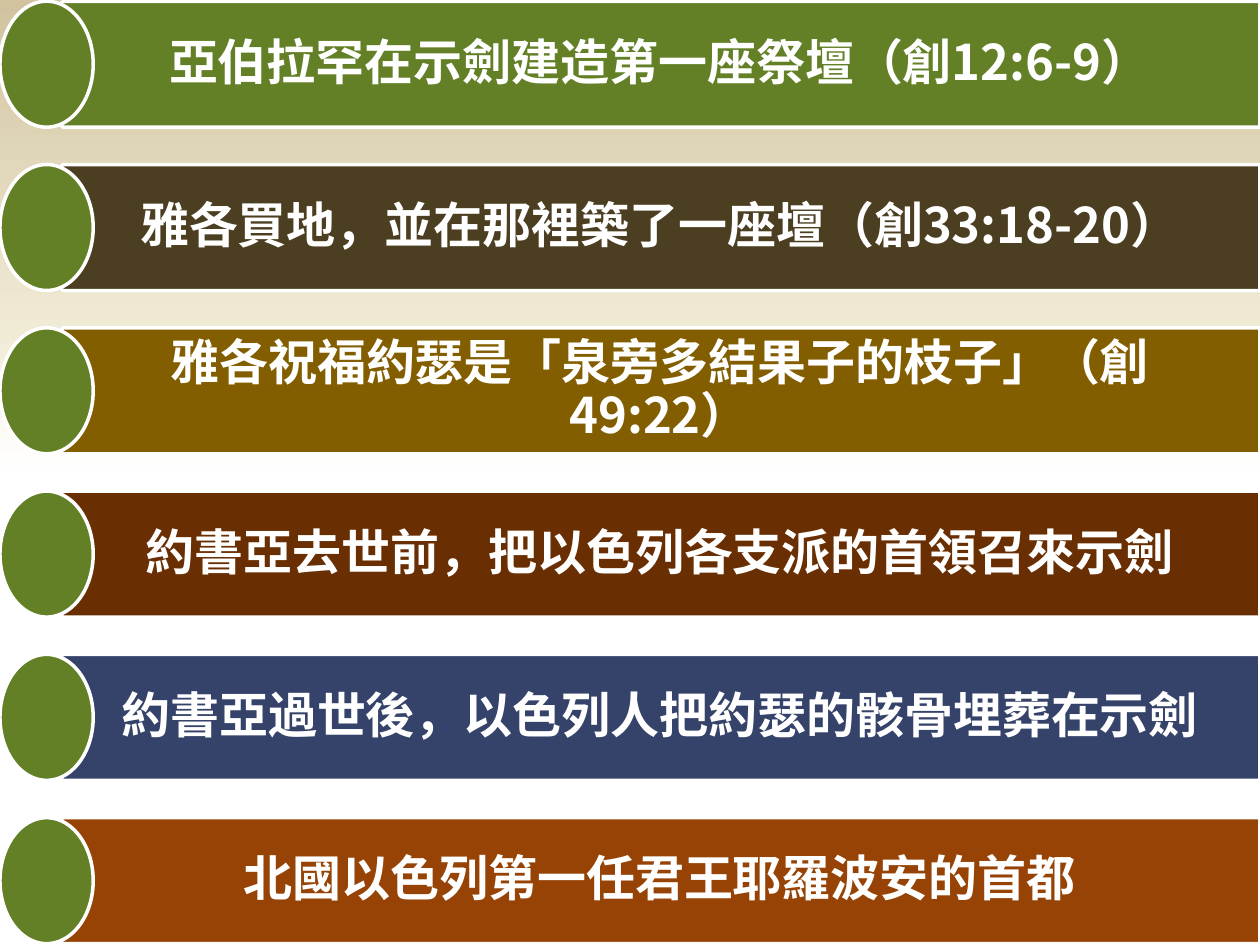
from copy import deepcopy
from dataclasses import dataclass

from lxml.etree import SubElement
from pptx import Presentation
from pptx.dml.color import RGBColor
from pptx.enum.shapes import MSO_SHAPE
from pptx.enum.text import MSO_ANCHOR, PP_ALIGN
from pptx.oxml.ns import qn
from pptx.slide import Slide
from pptx.util import Pt

COLORS = {
    "white": "FFFFFF",
    "cream": "F0EBD5",
    "sand": "D1C39F",
    "green": "638026",
    "umber": "4B3E21",
    "ochre": "835E01",
    "brown": "692F03",
    "navy": "35436A",
    "rust": "964305",
}
FONT = "Noto Sans CJK SC"
SLIDE_WIDTH, SLIDE_HEIGHT = 720, 540
FIRST_TOP, BAR_PITCH, BAR_HEIGHT = 0.72, 93.31, 72
ELLIPSE_WIDTH = 53.28
TEXT_LEFT = 18


@dataclass(frozen=True)
class Event:
    text: str
    color: str


EVENTS = [
    Event("亞伯拉罕在示劍建造第一座祭壇（創12:6-9）", "green"),
    Event("雅各買地，並在那裡築了一座壇（創33:18-20）", "umber"),
    Event("雅各祝福約瑟是「泉旁多結果子的枝子」（創49:22）", "ochre"),
    Event("約書亞去世前，把以色列各支派的首領召來示劍", "brown"),
    Event("約書亞過世後，以色列人把約瑟的骸骨埋葬在示劍", "navy"),
    Event("北國以色列第一任君王耶羅波安的首都", "rust"),
]


def rgb(color: str) -> RGBColor:
    return RGBColor.from_string(COLORS[color])


def paint_background(slide: Slide) -> None:
    fill = slide.background.fill
    fill.gradient()
    fill.gradient_angle = 90
    stop_list = next(slide.element.iter(qn("a:gsLst")))
    stop_list.append(deepcopy(stop_list[-1]))
    stops = [("white", 0.5), ("cream", 0.65), ("sand", 1)]
    for stop, (color, position) in zip(fill.gradient_stops, stops):
        stop.color.rgb = rgb(color)
        stop.position = position


def add_outlined_shape(slide: Slide, kind: MSO_SHAPE, top: float, width: float,
                       color: str, rotation: float = 0) -> None:
    shape = slide.shapes.add_shape(kind, Pt(0), Pt(top), Pt(width), Pt(BAR_HEIGHT))
    shape.rotation = rotation
    shape.shadow.inherit = False
    shape.fill.solid()
    shape.fill.fore_color.rgb = rgb(color)
    shape.line.color.rgb = rgb("white")
    shape.line.width = Pt(2)


def add_text(slide: Slide, text: str, *, left: float, top: float, width: float,
             height: float, size: float = 28, color: str = "white",
             bold: bool = True) -> None:
    shape = slide.shapes.add_textbox(Pt(left), Pt(top), Pt(width), Pt(height))
    frame = shape.text_frame
    frame.word_wrap = True
    frame.vertical_anchor = MSO_ANCHOR.MIDDLE
    frame.margin_left, frame.margin_right = Pt(31.68), Pt(15.84)
    frame.margin_top = frame.margin_bottom = Pt(8.64)
    paragraph = frame.paragraphs[0]
    paragraph.alignment = PP_ALIGN.CENTER
    paragraph.line_spacing = 0.9
    properties = paragraph._p.get_or_add_pPr()
    spacing = SubElement(properties, qn("a:spcAft"))
    SubElement(spacing, qn("a:spcPct"), val="35000")
    run = paragraph.add_run()
    run.text = text
    run.font.size = Pt(size)
    run.font.bold = bold
    run.font.color.rgb = rgb(color)
    run.font.name = FONT
    SubElement(run._r.get_or_add_rPr(), qn("a:ea"), typeface=FONT)


def add_event(slide: Slide, event: Event, top: float) -> None:
    add_outlined_shape(slide, MSO_SHAPE.PENTAGON, top, SLIDE_WIDTH, event.color, 180)
    add_text(slide, event.text, left=TEXT_LEFT, top=top,
             width=SLIDE_WIDTH - TEXT_LEFT, height=BAR_HEIGHT)
    add_outlined_shape(slide, MSO_SHAPE.OVAL, top, ELLIPSE_WIDTH, "green")


def main() -> None:
    presentation = Presentation()
    presentation.slide_width = Pt(SLIDE_WIDTH)
    presentation.slide_height = Pt(SLIDE_HEIGHT)
    slide = presentation.slides.add_slide(presentation.slide_layouts[6])
    paint_background(slide)
    for index, event in enumerate(EVENTS):
        add_event(slide, event, FIRST_TOP + index * BAR_PITCH)
    presentation.save("out.pptx")


if __name__ == "__main__":
    main()
